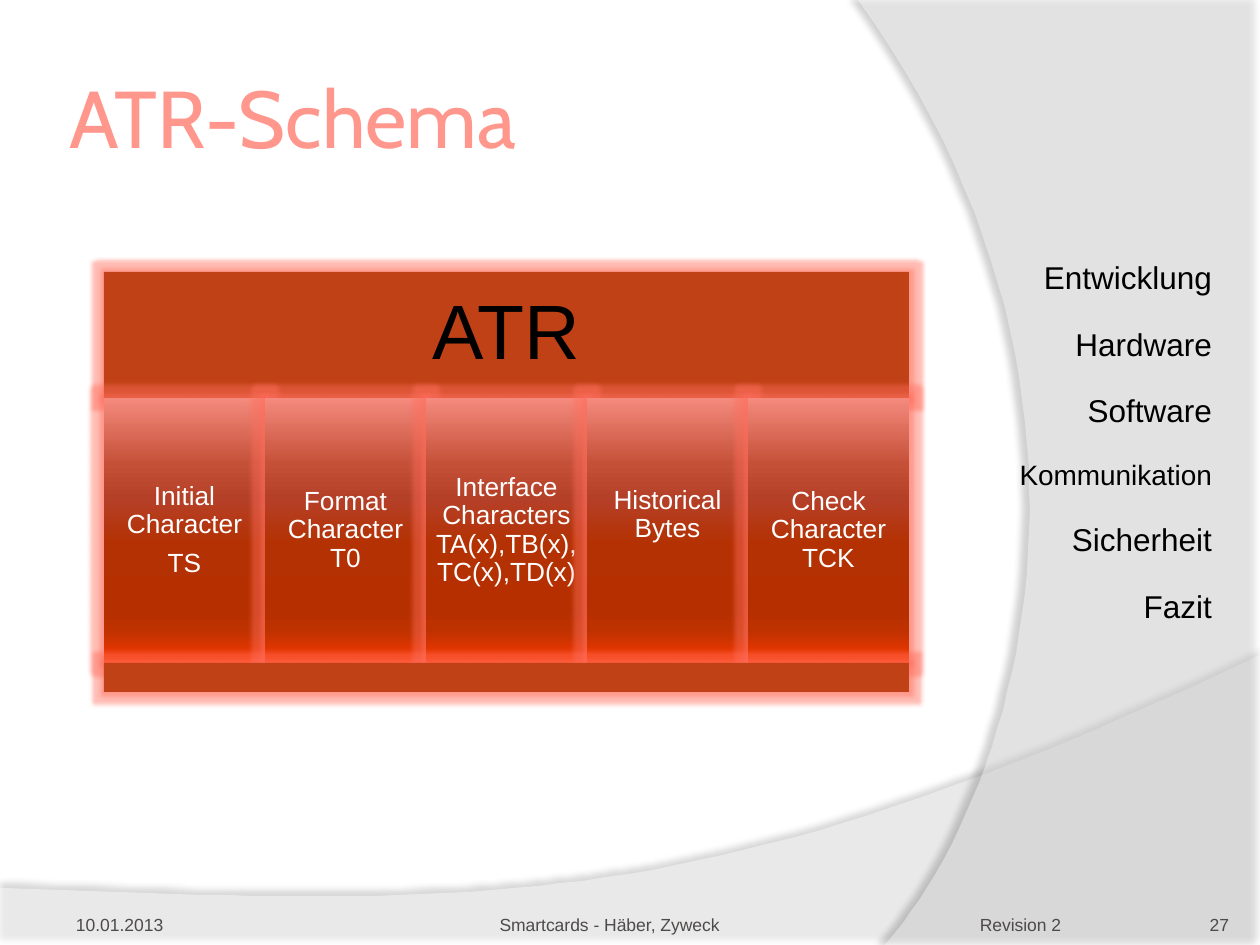
from lxml import etree
from pptx import Presentation
from pptx import util as u
from pptx.dml.color import RGBColor
from pptx.enum import shapes, text
from pptx.oxml.ns import qn

EMU_PER_PX = 914400 / 126
LEFT, CENTER, RIGHT = text.PP_ALIGN.LEFT, text.PP_ALIGN.CENTER, text.PP_ALIGN.RIGHT
MIDDLE, BOTTOM = text.MSO_ANCHOR.MIDDLE, text.MSO_ANCHOR.BOTTOM


def px(*values):
    return [u.Emu(round(value * EMU_PER_PX)) for value in values]


def color(code):
    return RGBColor.from_string(code)


def bezier(start, first, second, end, steps=48):
    """Points along a cubic curve, without its start."""
    points = []
    for step in range(1, steps + 1):
        t = step / steps
        weights = ((1 - t) ** 3, 3 * t * (1 - t) ** 2, 3 * t * t * (1 - t), t ** 3)
        corners = (start, first, second, end)
        points.append(tuple(sum(w * c[axis] for w, c in zip(weights, corners))
                            for axis in (0, 1)))
    return points


def write(frame, paragraphs, size=10, ink="4E4A4A", font="Arial", align=LEFT,
          anchor=BOTTOM, insets=(0, 6, 0, 0), before=0, after=0, spacing=1.0, sizes=None):
    """Fill a text frame; a newline inside a paragraph is a line break."""
    frame.word_wrap = True
    frame.auto_size = text.MSO_AUTO_SIZE.NONE
    frame.vertical_anchor = anchor
    (frame.margin_left, frame.margin_top,
     frame.margin_right, frame.margin_bottom) = px(*insets)
    for index, content in enumerate(paragraphs):
        para = frame.add_paragraph() if index else frame.paragraphs[0]
        para.alignment = align
        para.line_spacing = spacing
        para.space_before, para.space_after = u.Pt(before), u.Pt(after)
        para.font.size = u.Pt(size)
        for number, line in enumerate(content.split("\n")):
            if number:
                para.add_line_break()
            if line:
                span = para.add_run()
                span.text = line
                span.font.name = font
                span.font.size = u.Pt((sizes or {}).get(content, size))
                span.font.color.rgb = color(ink)


class SlideBuilder:
    BRICK = "BF4115"
    GLOW = "FF6E5C"
    CELL_STOPS = [(0, "F48A7D"), (25, "C55038"), (38, "B54028"), (55, "B43103"),
                  (80, "B62F00"), (88, "BF3200"), (100, "FB3700")]

    def __init__(self, page):
        self.page = page

    def add_color(self, parent, code, opacity=100):
        node = etree.SubElement(parent, qn("a:srgbClr"), val=code)
        if opacity < 100:
            etree.SubElement(node, qn("a:alpha"), val=str(opacity * 1000))

    def add_effect(self, shape, kind, code, opacity, **settings):
        shape.shadow.inherit = False
        effects = shape._element.spPr.find(qn("a:effectLst"))
        effect = etree.SubElement(effects, qn(kind),
                                  {key: str(value) for key, value in settings.items()})
        self.add_color(effect, code, opacity)

    def title(self, content, *place):
        box = self.page.shapes.title
        box.left, box.top, box.width, box.height = px(*place)
        write(box.text_frame, [content], size=46, ink="FF978C", font="Cabin",
              anchor=MIDDLE, insets=(6, 6, 6, 6))

    def label(self, paragraphs, *place, **style):
        box = self.page.shapes.add_textbox(*px(*place))
        write(box.text_frame, paragraphs, **style)

    def swoosh(self, points, opacity, shade, distance, direction):
        builder = self.page.shapes.build_freeform(*points[0], scale=EMU_PER_PX)
        builder.add_line_segments(points[1:], close=True)
        shape = builder.convert_to_shape()
        shape.line.fill.background()
        shape.fill.solid()
        shape.fill.fore_color.rgb = color("FFFFFF")
        fill = shape._element.spPr.find(qn("a:solidFill"))
        etree.SubElement(fill[0], qn("a:alpha"), val=str(opacity * 1000))
        self.add_effect(shape, "a:outerShdw", "000000", shade, blurRad=u.Pt(4),
                        dist=u.Pt(distance), dir=direction * 60000,
                        algn="ctr", rotWithShape=0)

    def block(self, paragraphs, *place, stops=None, size=15, ink="FFFFFF", inset=8):
        shape = self.page.shapes.add_shape(shapes.MSO_SHAPE.RECTANGLE, *px(*place))
        shape.line.fill.background()
        if stops:
            shape.fill.gradient()
            shape.fill.gradient_angle = 270
            stop_list = shape._element.spPr.find(qn("a:gradFill")).find(qn("a:gsLst"))
            for stop in list(stop_list):
                stop_list.remove(stop)
            for position, code in stops:
                stop = etree.SubElement(stop_list, qn("a:gs"), pos=str(position * 1000))
                self.add_color(stop, code)
        else:
            shape.fill.solid()
            shape.fill.fore_color.rgb = color(self.BRICK)
        self.add_effect(shape, "a:glow", self.GLOW, 45, rad=u.Pt(5))
        write(shape.text_frame, paragraphs, size=size, ink=ink, align=CENTER,
              anchor=MIDDLE, insets=(inset,) * 4, after=round(size * 0.38), spacing=0.9)


def main():
    deck = Presentation()
    deck.slide_width, deck.slide_height = u.Inches(10), u.Inches(7.5)
    page = deck.slides.add_slide(deck.slide_layouts[5])
    builder = SlideBuilder(page)

    # Background curves
    builder.swoosh([(0, 888), (0, 946), (1260, 946), (1260, 655)]
                   + bezier((1260, 655), (704, 919), (493, 906), (0, 888)),
                   opacity=45, shade=35, distance=3.5, direction=270)
    builder.swoosh([(1262, 0), (1262, 945), (885, 945)]
                   + bezier((885, 945), (1028, 780), (1133, 378), (858, 0)),
                   opacity=40, shade=45, distance=4, direction=180)

    # Title and chapter list
    builder.title("ATR-Schema", 63, 38, 915, 157)
    builder.label(["Entwicklung", "Hardware", "Software", "Kommunikation",
                   "Sicherheit", "Fazit"], 999, 37, 226, 809,
                  size=18, ink="000000", align=RIGHT, anchor=MIDDLE,
                  insets=(13, 6, 13, 6), before=4.5, after=12,
                  sizes={"Kommunikation": 16})

    # ATR diagram: header, one cell per part, footer bar
    parts = [["Initial Character", "TS"],
             ["Format Character\nT0"],
             ["Interface Characters\nTA(x),TB(x),\nTC(x),TD(x)"],
             ["Historical Bytes\n"],
             ["Check Character\nTCK"]]
    left, cell_width = 104, 161
    width = cell_width * len(parts)
    builder.block(["ATR"], left, 272, width, 126, size=44, ink="000000", inset=23)
    for column, part in enumerate(parts):
        builder.block(part, left + column * cell_width, 398, cell_width, 265,
                      stops=builder.CELL_STOPS)
    builder.block([], left, 663, width, 29)

    # Footer line
    builder.label(["10.01.2013"], 63, 885, 219, 50, insets=(13, 6, 13, 0))
    builder.label(["Smartcards - Häber, Zyweck"], 312, 885, 595, 50, align=CENTER)
    builder.label(["Revision 2"], 941, 885, 159, 50, align=CENTER)
    builder.label(["27"], 1124, 885, 105, 50, align=RIGHT, insets=(0, 0, 0, 0))

    deck.save("out.pptx")


if __name__ == "__main__":
    main()
